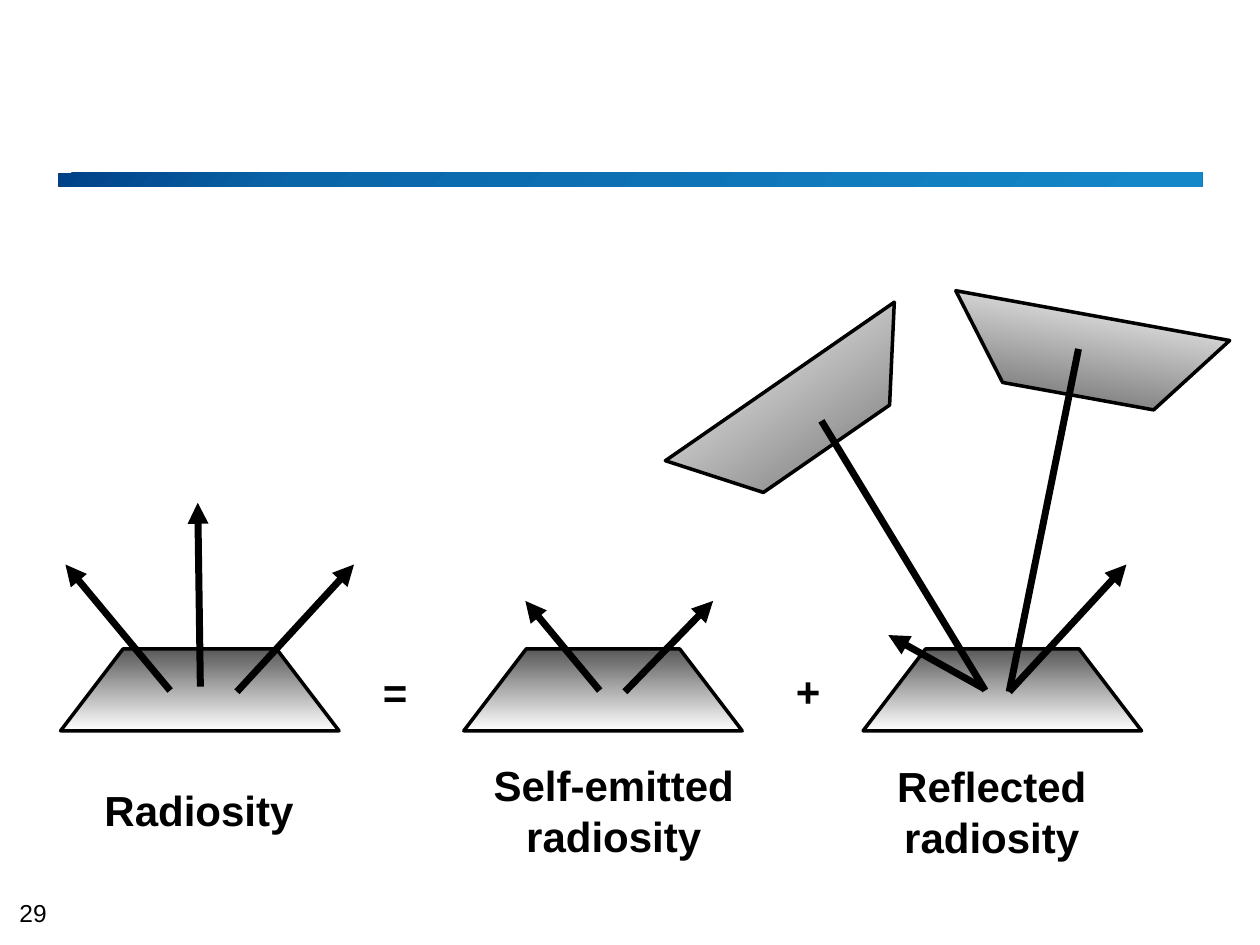
from lxml.etree import SubElement
from pptx import Presentation
from pptx.dml.color import RGBColor
from pptx.enum.shapes import MSO_CONNECTOR, MSO_SHAPE
from pptx.enum.text import MSO_ANCHOR, PP_ALIGN
from pptx.oxml.ns import qn
from pptx.util import Pt

BLACK = "000000"
BAR_STOPS = [(0, "004187"), (21, "0A64A8"), (96, "1487C8")]
PATCH_STOPS = [(0, "595959"), (100, "FFFFFF")]


def color(value):
    return RGBColor.from_string(value)


def set_gradient(sp, stops, angle):
    sp.fill.gradient()
    sp.fill.gradient_angle = 360 - angle
    gs_list = sp._element.spPr.find(qn("a:gradFill")).find(qn("a:gsLst"))
    for gs in list(gs_list):
        gs_list.remove(gs)
    for pos, value in stops:
        gs = SubElement(gs_list, qn("a:gs"), pos=str(pos * 1000))
        SubElement(gs, qn("a:srgbClr"), val=value)


def add_bar(s):
    sp = s.shapes.add_shape(MSO_SHAPE.RECTANGLE, Pt(33.1), Pt(98.6), Pt(653.8), Pt(7.9))
    sp.shadow.inherit = False
    set_gradient(sp, BAR_STOPS, 45)
    sp.line.fill.background()


def add_patch(s, x, y, rotation=0):
    sp = s.shapes.add_shape(MSO_SHAPE.TRAPEZOID, Pt(x), Pt(y), Pt(159.1), Pt(46.8))
    sp.adjustments[0] = 0.763
    sp.rotation = rotation
    sp.shadow.inherit = False
    set_gradient(sp, PATCH_STOPS, 90)
    sp.line.color.rgb = color(BLACK)
    sp.line.width = Pt(2)


def add_ray(s, x1, y1, x2, y2, arrow=True):
    ray = s.shapes.add_connector(MSO_CONNECTOR.STRAIGHT, Pt(x1), Pt(y1), Pt(x2), Pt(y2))
    ray.line.color.rgb = color(BLACK)
    ray.line.width = Pt(4)
    if arrow:
        SubElement(ray.line._get_or_add_ln(), qn("a:tailEnd"), type="triangle")
    SubElement(ray._element.spPr, qn("a:effectLst"))


def add_text(s, text, x, y, w, h, size=24, bold=True, wrap=False, align=PP_ALIGN.LEFT):
    sp = s.shapes.add_textbox(Pt(x), Pt(y), Pt(w), Pt(h))
    tf = sp.text_frame
    tf.word_wrap = wrap
    tf.text = text
    p = tf.paragraphs[0]
    p.alignment = align
    font = p.runs[0].font
    font.name = "Arial"
    font.size = Pt(size)
    font.bold = bold
    font.color.rgb = color(BLACK)
    return tf


def add_slide_number(s):
    tf = add_text(s, "29", 11.1, 513.4, 20.6, 16.6, size=14, bold=False)
    tf.margin_left = tf.margin_right = tf.margin_top = tf.margin_bottom = 0
    tf.vertical_anchor = MSO_ANCHOR.BOTTOM


def main():
    prs = Presentation()
    prs.slide_width, prs.slide_height = Pt(720), Pt(540)
    s = prs.slides.add_slide(prs.slide_layouts[6])

    add_slide_number(s)
    add_bar(s)

    for x in (34.6, 265, 493.2):
        add_patch(s, x, 370.8)
    add_patch(s, 379.4, 213.8, 145.3)
    add_patch(s, 540.7, 180, 190.3)

    outgoing = [
        (114.5, 392.4, 113, 287.3),
        (97.2, 394.6, 37.4, 322.6),
        (135.4, 395.3, 202.3, 322.6),
        (342.7, 394.6, 300.2, 343.4),
        (357.1, 395.3, 407.5, 343.4),
        (576.7, 395.3, 643.7, 322.6),
        (561.6, 393.1, 507.6, 362.9),
    ]
    incoming = [(469.4, 240.5, 563, 394.6), (616.3, 199.4, 576.7, 395.3)]
    for ray in outgoing:
        add_ray(s, *ray)
    for ray in incoming:
        add_ray(s, *ray, arrow=False)

    add_text(s, "=", 211.7, 377.3, 28.8, 36.7)
    add_text(s, "+", 447.8, 376.6, 28.8, 36.7)
    add_text(s, "Radiosity", 52.6, 445, 123.8, 36.7)
    for text, x, y in (("Self-emitted radiosity", 265, 430.6),
                       ("Reflected radiosity", 481, 431.3)):
        add_text(s, text, x, y, 171.4, 65.5, wrap=True, align=PP_ALIGN.CENTER)

    prs.save("out.pptx")


if __name__ == "__main__":
    main()
